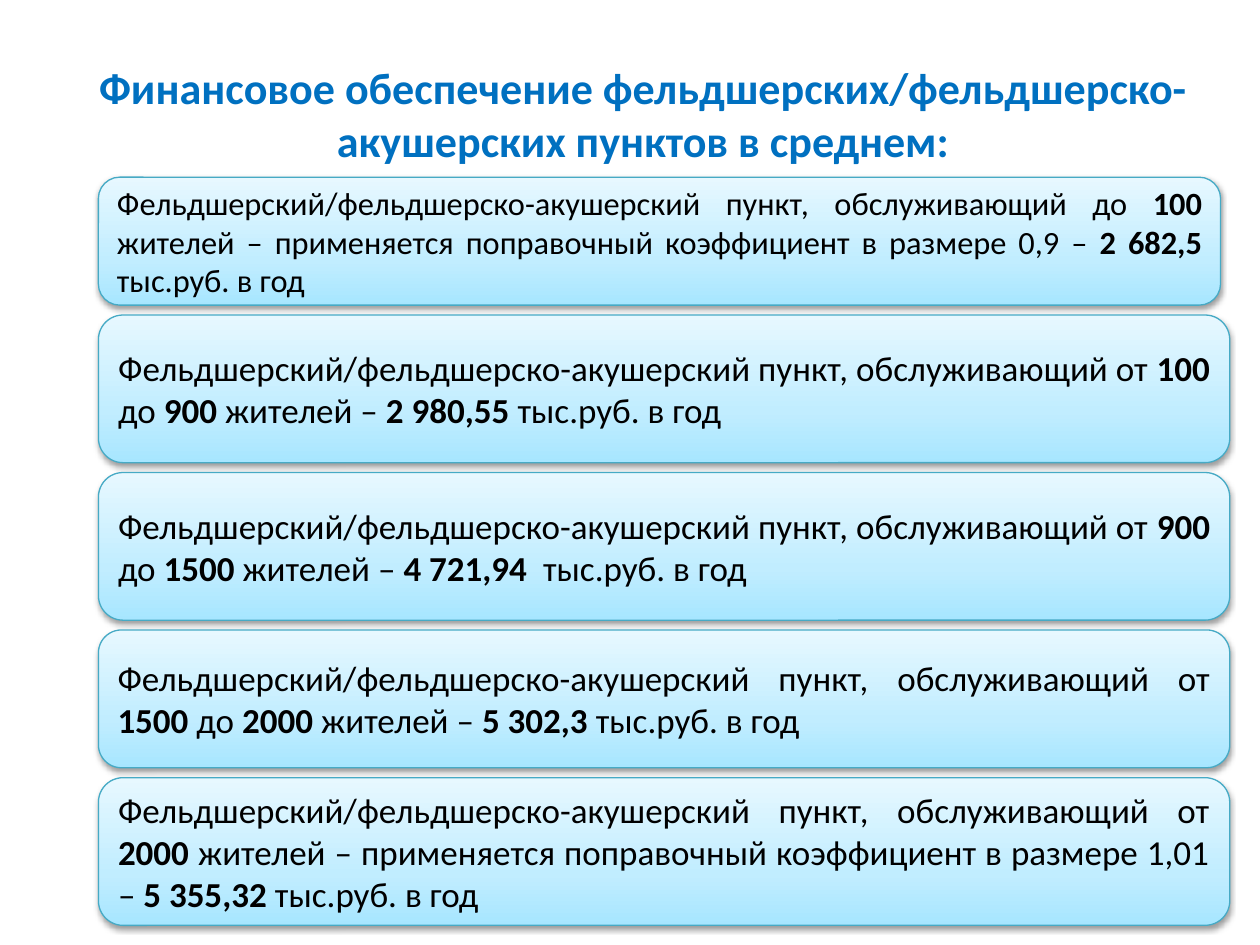
from copy import deepcopy

from lxml.etree import SubElement
from pptx import Presentation
from pptx.dml.color import RGBColor
from pptx.enum.shapes import MSO_SHAPE
from pptx.enum.text import MSO_ANCHOR, MSO_AUTO_SIZE, PP_ALIGN
from pptx.oxml.ns import qn
from pptx.util import Pt

FONT = "Calibri"
LEFT, WIDTH = 56.25, 646.5
GRADIENT = [(0, "A7E6FF"), (0.35, "C1EDFF"), (1, "E7F8FF")]
TITLE = "Финансовое обеспечение фельдшерских/фельдшерско-акушерских пунктов в среднем:"
POINT = "Фельдшерский/фельдшерско-акушерский пункт, обслуживающий "

# Top, height, width, text size, runs; every second run is bold
CARDS = [
    (180, 84.4, WIDTH, 20, [POINT + "от ", "100 ", "до ", "900", " жителей – ",
                            "2 980,55 ", "тыс.руб. в год"]),
    (270, 84.4, WIDTH, 20, [POINT + "от ", "900 ", "до ", "1500", " жителей – ",
                            "4 721,94  ", "тыс.руб. в год"]),
    (360, 78.75, WIDTH, 20, [POINT + "от ", "1500", " до ", "2000", " жителей – ",
                             "5 302,3 ", "тыс.руб. в год"]),
    (101.25, 73.1, 641.25, 18.5,
     [POINT + "до ", "100 ",
      "жителей – применяется поправочный коэффициент в размере 0,9 – ",
      "2 682,5 ", "тыс.руб. в год"]),
    (444.4, 84.4, WIDTH, 20,
     [POINT + "от ", "2000",
      " жителей – применяется поправочный коэффициент в размере 1,01 – ",
      "5 355,32 ", "тыс.руб. в год"]),
]


def color(value):
    return RGBColor.from_string(value)


def place(sp, left, top, width, height):
    sp.left, sp.top, sp.width, sp.height = Pt(left), Pt(top), Pt(width), Pt(height)


def prepare_text(sp, align):
    tf = sp.text_frame
    tf.word_wrap = True
    tf.auto_size = MSO_AUTO_SIZE.NONE
    tf.vertical_anchor = MSO_ANCHOR.MIDDLE
    p = tf.paragraphs[0]
    p.alignment = align
    return p


def add_run(p, text, size, hex_color, bold):
    r = p.add_run()
    r.text = text
    r.font.name = FONT
    r.font.size = Pt(size)
    r.font.bold = bold
    r.font.color.rgb = color(hex_color)


def add_title(s):
    sp = s.shapes.title
    place(sp, 39.5, 39.5, 656, 74)
    p = prepare_text(sp, PP_ALIGN.CENTER)
    sp.text_frame.margin_bottom = Pt(27)
    add_run(p, TITLE, 25.2, "0070C0", True)


def round_placeholder(sp):
    """Turn the body placeholder into a rounded box without a bullet."""
    geom = SubElement(sp.element.spPr, qn("a:prstGeom"), prst="roundRect")
    SubElement(geom, qn("a:avLst"))
    p_pr = sp.text_frame.paragraphs[0]._p.get_or_add_pPr()
    p_pr.set("marL", "0")
    p_pr.set("indent", "0")
    SubElement(p_pr, qn("a:buNone"))


def style_card(sp):
    # Three-stop vertical gradient
    sp.fill.gradient()
    sp.fill.gradient_angle = 90
    gs_lst = sp.element.spPr.find(".//" + qn("a:gsLst"))
    gs_lst.insert(1, deepcopy(gs_lst[0]))
    for stop, (position, value) in zip(sp.fill.gradient_stops, GRADIENT):
        stop.position = position
        stop.color.rgb = color(value)
    # Outline
    sp.line.color.rgb = color("46AAC5")
    sp.line.width = Pt(0.75)
    # Soft shadow below
    sp.shadow.inherit = False
    effects = sp.element.spPr.find(qn("a:effectLst"))
    shadow = SubElement(effects, qn("a:outerShdw"), blurRad=str(Pt(3.1)),
                        dist=str(Pt(1.6)), dir="5400000", rotWithShape="0")
    black = SubElement(shadow, qn("a:srgbClr"), val="000000")
    SubElement(black, qn("a:alpha"), val="38000")


def fill_card(sp, size, texts):
    style_card(sp)
    p = prepare_text(sp, PP_ALIGN.JUSTIFY)
    for i, text in enumerate(texts):
        add_run(p, text, size, "000000", i % 2 == 1)


def main():
    prs = Presentation()
    prs.slide_width, prs.slide_height = Pt(720), Pt(540)
    s = prs.slides.add_slide(prs.slide_layouts[1])
    add_title(s)

    # The first card is the body placeholder, the others are shapes
    for i, (top, height, width, size, texts) in enumerate(CARDS):
        box = (LEFT, top, width, height)
        if i == 0:
            sp = s.placeholders[1]
            place(sp, *box)
            round_placeholder(sp)
        else:
            sp = s.shapes.add_shape(MSO_SHAPE.ROUNDED_RECTANGLE, *map(Pt, box))
        fill_card(sp, size, texts)

    prs.save("out.pptx")


if __name__ == "__main__":
    main()
